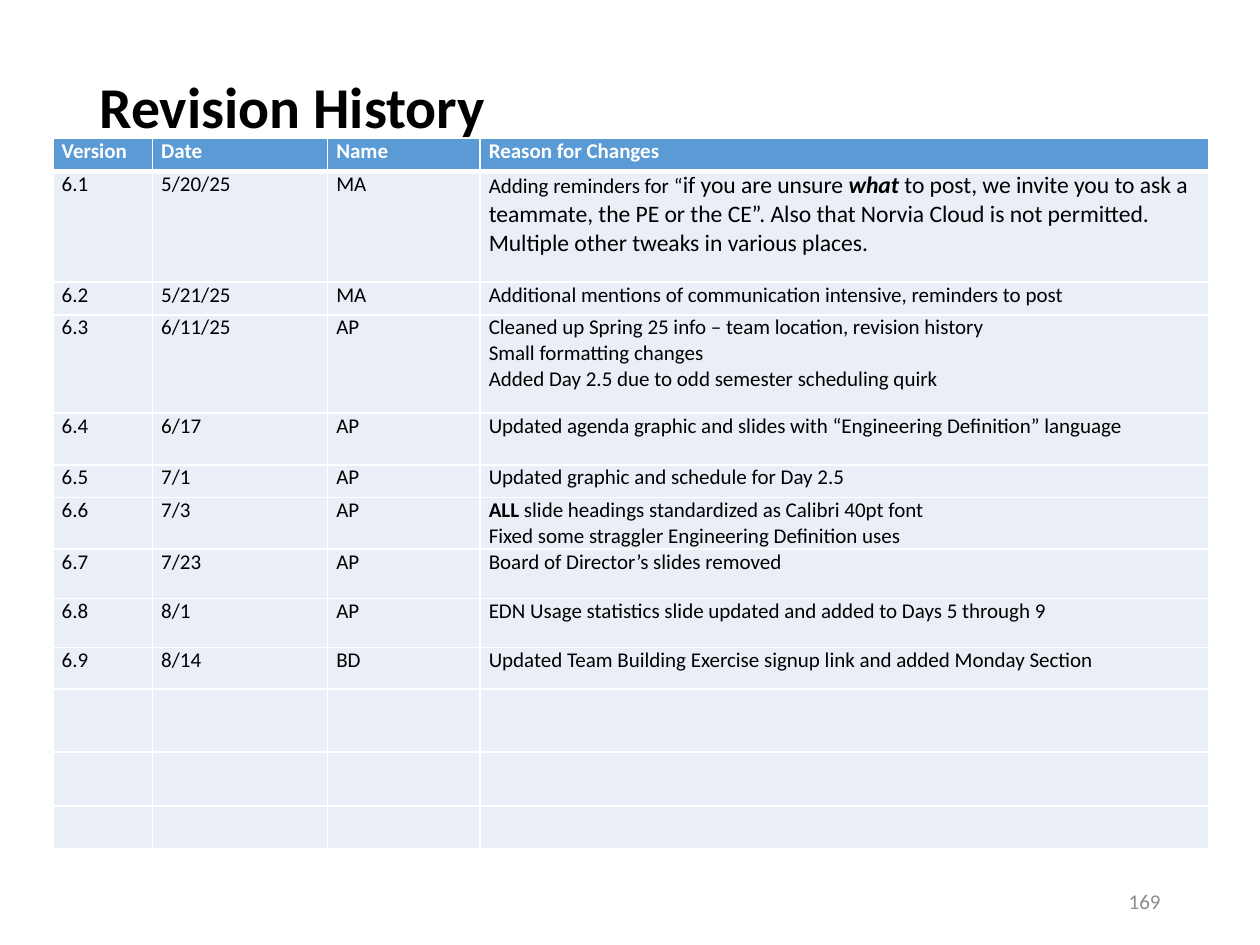
from lxml.etree import SubElement
from pptx import Presentation
from pptx.dml.color import RGBColor
from pptx.enum.text import MSO_ANCHOR, PP_ALIGN
from pptx.oxml.ns import qn
from pptx.util import Inches, Pt

BLACK = RGBColor(0x00, 0x00, 0x00)
WHITE = RGBColor(0xFF, 0xFF, 0xFF)
BLUE = RGBColor(0x5B, 0x9B, 0xD5)
PALE = RGBColor(0xEA, 0xEF, 0xF7)
GREY = RGBColor(0x8C, 0x8C, 0x8C)

WIDTHS = [0.79, 1.39, 1.21, 5.78]
HEIGHTS = [0.26, 0.88, 0.26, 0.78, 0.41, 0.26, 0.41,
           0.39, 0.39, 0.33, 0.5, 0.43, 0.34]

# A reason is a list of paragraphs; a paragraph is a list of
# (text, size, bold, italic) runs, or a plain string.
ROWS = [
    ("Version", "Date", "Name", ["Reason for Changes"]),
    ("6.1", "5/20/25", "MA", [[
        ("Adding reminders for “", 12, False, False),
        ("if you are unsure ", 13.5, False, False),
        ("what", 13.5, True, True),
        (" to post, we invite you to ask a teammate, the PE or the CE”. "
         "Also that Norvia Cloud is not permitted. "
         "Multiple other tweaks in various places.", 13.5, False, False)]]),
    ("6.2", "5/21/25", "MA",
     ["Additional mentions of communication intensive, reminders to post"]),
    ("6.3", "6/11/25", "AP",
     ["Cleaned up Spring 25 info – team location, revision history",
      "Small formatting changes",
      "Added Day 2.5 due to odd semester scheduling quirk"]),
    ("6.4", "6/17", "AP",
     ["Updated agenda graphic and slides with “Engineering Definition” language"]),
    ("6.5", "7/1", "AP", ["Updated graphic and schedule for Day 2.5"]),
    ("6.6", "7/3", "AP",
     [[("ALL", 12, True, False),
       (" slide headings standardized as Calibri 40pt font", 12, False, False)],
      "Fixed some straggler Engineering Definition uses"]),
    ("6.7", "7/23", "AP", ["Board of Director’s slides removed"]),
    ("6.8", "8/1", "AP",
     ["EDN Usage statistics slide updated and added to Days 5 through 9"]),
    ("6.9", "8/14", "BD",
     ["Updated Team Building Exercise signup link and added Monday Section"]),
]


def add_run(para, text, size, color, bold=False, italic=False):
    run = para.add_run()
    run.text = text
    font = run.font
    font.name = "Calibri"
    font.size = Pt(size)
    font.bold = bold
    font.italic = italic
    font.color.rgb = color


def add_edges(cell, head):
    """Draw white cell borders, with a thick one below the header."""
    props = cell._tc.get_or_add_tcPr()
    for side in "LRTB":
        thick = head and side == "B"
        line = SubElement(props, qn(f"a:ln{side}"), w=str(Pt(3 if thick else 1)))
        fill = SubElement(line, qn("a:solidFill"))
        SubElement(fill, qn("a:srgbClr"), val=str(WHITE))


deck = Presentation()
deck.slide_width = Inches(10)
deck.slide_height = Inches(7.5)
slide = deck.slides.add_slide(deck.slide_layouts[5])

# Title, lifted above the table by its bottom inset
title = slide.shapes.title
title.left, title.top = Inches(0.69), Inches(0.4)
title.width, title.height = Inches(8.62), Inches(1.45)
frame = title.text_frame
frame.vertical_anchor = MSO_ANCHOR.MIDDLE
frame.margin_bottom = Inches(0.55)
para = frame.paragraphs[0]
para.alignment = PP_ALIGN.LEFT
para.line_spacing = 0.9
add_run(para, "Revision History", 33, BLACK, True)

# Revision table
table = slide.shapes.add_table(
    len(HEIGHTS), len(WIDTHS), Inches(0.42), Inches(1.1),
    Inches(sum(WIDTHS)), Inches(sum(HEIGHTS))).table
table.horz_banding = False
for col, width in zip(table.columns, WIDTHS):
    col.width = Inches(width)
for row, height in zip(table.rows, HEIGHTS):
    row.height = Inches(height)

for r, row in enumerate(table.rows):
    head = r == 0
    for cell in row.cells:
        add_edges(cell, head)
        cell.fill.solid()
        cell.fill.fore_color.rgb = BLUE if head else PALE
        cell.margin_left = cell.margin_right = Inches(0.07)
        cell.margin_top = cell.margin_bottom = 0

for r, (version, date, name, reason) in enumerate(ROWS):
    head = r == 0
    color = WHITE if head else BLACK
    for c, paras in enumerate([[version], [date], [name], reason]):
        frame = table.cell(r, c).text_frame
        for i, runs in enumerate(paras):
            para = frame.add_paragraph() if i else frame.paragraphs[0]
            if isinstance(runs, str):
                runs = [(runs, 12, head, False)]
            for text, size, bold, italic in runs:
                add_run(para, text, size, color, bold, italic)

# Page number
box = slide.shapes.add_textbox(Inches(7.06), Inches(6.95), Inches(2.25), Inches(0.4))
frame = box.text_frame
frame.word_wrap = True
frame.vertical_anchor = MSO_ANCHOR.MIDDLE
para = frame.paragraphs[0]
para.alignment = PP_ALIGN.RIGHT
add_run(para, "169", 12, GREY)

deck.save("out.pptx")
